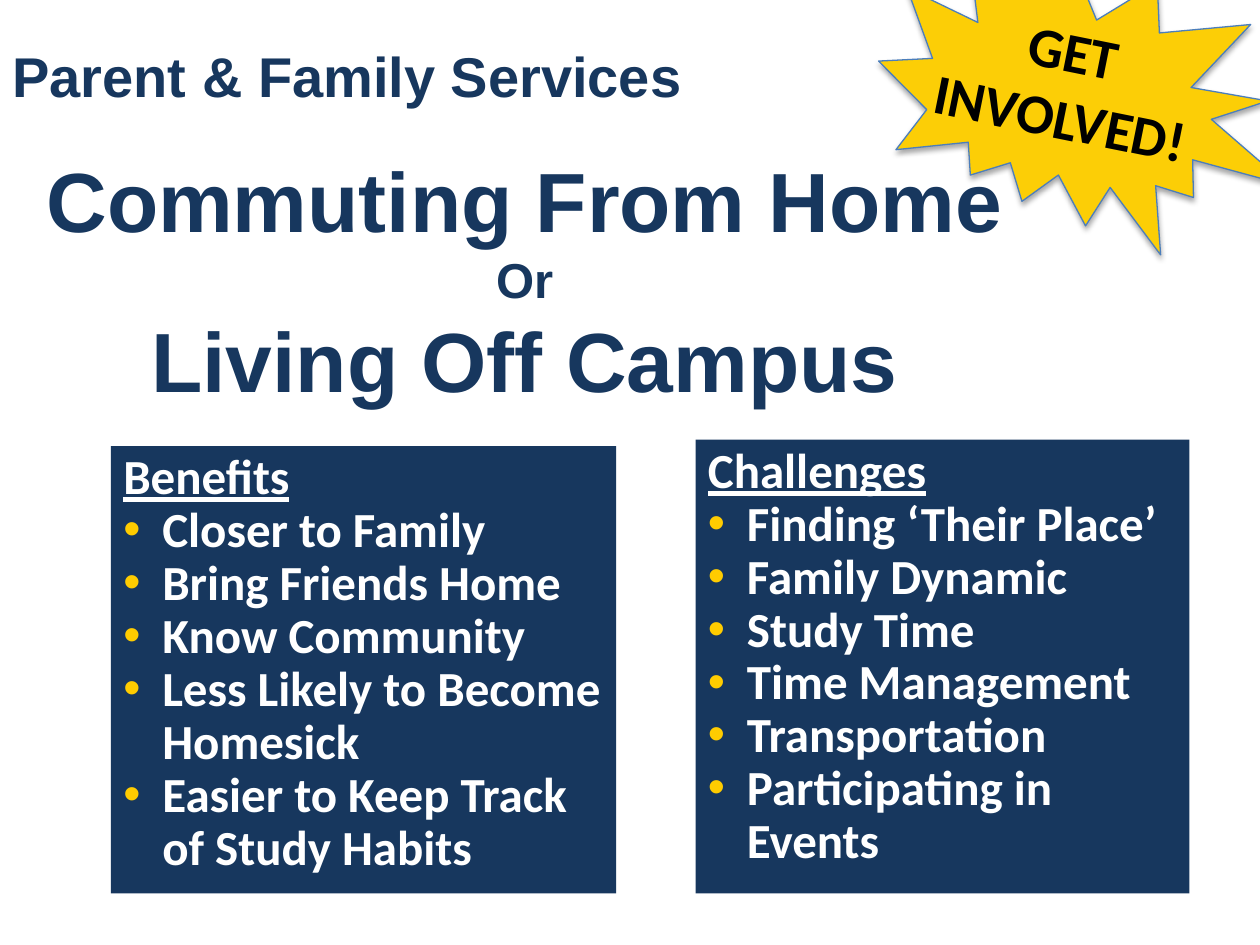
from lxml import etree
from pptx import Presentation
from pptx import util as u
from pptx.dml.color import RGBColor
from pptx.enum import shapes, text
from pptx.oxml.ns import qn

NAVY = RGBColor(0x17, 0x37, 0x5E)
GOLD = RGBColor(0xFC, 0xCE, 0x06)
BULLET_GOLD = RGBColor(0xFF, 0xCC, 0x00)
BLUE = RGBColor(0x4B, 0x7E, 0xBC)
WHITE = RGBColor(0xFF, 0xFF, 0xFF)
BLACK = RGBColor(0, 0, 0)


def write(para, words, size, font, color, underline=False):
    span = para.add_run()
    span.text = words
    span.font.size = u.Pt(size)
    span.font.name = font
    span.font.bold = True
    span.font.underline = underline
    span.font.color.rgb = color


def add_lines(box, lines, font, color, align, anchor):
    """Fill a box with one paragraph per (words, size) pair."""
    frame = box.text_frame
    frame.word_wrap = True
    frame.vertical_anchor = anchor
    for number, (words, size) in enumerate(lines):
        para = frame.add_paragraph() if number else frame.paragraphs[0]
        para.alignment = align
        write(para, words, size, font, color)


deck = Presentation()
deck.slide_width, deck.slide_height = u.Inches(10), u.Inches(7.5)
page = deck.slides.add_slide(deck.slide_layouts[6])

# Title and heading
title = page.shapes.add_textbox(u.Inches(0), u.Inches(0.23), u.Inches(6.08), u.Inches(0.73))
add_lines(title, [("Parent & Family Services", 32)], "Arial", NAVY,
          text.PP_ALIGN.LEFT, text.MSO_ANCHOR.MIDDLE)

heading = page.shapes.add_textbox(u.Inches(-0.14), u.Inches(1.59), u.Inches(8.61), u.Inches(1.25))
add_lines(heading, [("Commuting From Home", 48), ("Or", 28), ("Living Off Campus", 48)],
          "Arial", NAVY, text.PP_ALIGN.CENTER, text.MSO_ANCHOR.MIDDLE)

# Panels with a heading and bullets
panels = [
    ((5.52, 3.49, 3.92, 3.6), "Challenges",
     ["Finding ‘Their Place’", "Family Dynamic", "Study Time", "Time Management",
      "Transportation", "Participating in Events"]),
    ((0.88, 3.54, 4.01, 3.55), "Benefits",
     ["Closer to Family", "Bring Friends Home", "Know Community",
      "Less Likely to Become Homesick", "Easier to Keep Track of Study Habits"]),
]
for place, name, points in panels:
    panel = page.shapes.add_shape(shapes.MSO_SHAPE.RECTANGLE, *map(u.Inches, place))
    panel.shadow.inherit = False
    panel.fill.solid()
    panel.fill.fore_color.rgb = NAVY
    panel.line.fill.background()
    frame = panel.text_frame
    frame.word_wrap = True
    frame.vertical_anchor = text.MSO_ANCHOR.TOP
    para = frame.paragraphs[0]
    para.alignment = text.PP_ALIGN.LEFT
    para.line_spacing = 0.9
    write(para, name, 28, "Calibri", WHITE, underline=True)
    for point in points:
        para = frame.add_paragraph()
        para.alignment = text.PP_ALIGN.LEFT
        para.line_spacing = 0.9
        props = para._p.get_or_add_pPr()
        props.set("marL", str(u.Inches(0.31)))
        props.set("indent", str(u.Inches(-0.31)))
        bullet_color = etree.SubElement(props, qn("a:buClr"))
        etree.SubElement(bullet_color, qn("a:srgbClr"), val=str(BULLET_GOLD))
        etree.SubElement(props, qn("a:buFont"), typeface="Arial")
        etree.SubElement(props, qn("a:buChar"), char="•")
        write(para, point, 28, "Calibri", WHITE)

# Starburst with a soft shadow
burst = page.shapes.add_shape(shapes.MSO_SHAPE.EXPLOSION2, u.Inches(6.97), u.Inches(-0.5),
                              u.Inches(3.32), u.Inches(2.57))
burst.rotation = 40
burst.fill.solid()
burst.fill.fore_color.rgb = GOLD
burst.line.color.rgb = BLUE
burst.line.width = u.Pt(0.75)
burst.shadow.inherit = False
effects = burst._element.spPr.find(qn("a:effectLst"))
shadow = etree.SubElement(effects, qn("a:outerShdw"), blurRad=str(u.Pt(3.1)),
                          dist=str(u.Pt(1.8)), dir="5400000", rotWithShape="0")
shadow_color = etree.SubElement(shadow, qn("a:srgbClr"), val=str(BLACK))
etree.SubElement(shadow_color, qn("a:alpha"), val="35000")

# Call to action on the starburst
call = page.shapes.add_textbox(u.Inches(7.13), u.Inches(0.08), u.Inches(2.68), u.Inches(1.18))
call.rotation = 11.5
add_lines(call, [("GET", 32), ("INVOLVED!", 32)], "Calibri", BLACK,
          text.PP_ALIGN.CENTER, text.MSO_ANCHOR.TOP)
call.text_frame.auto_size = text.MSO_AUTO_SIZE.SHAPE_TO_FIT_TEXT

deck.save("out.pptx")
